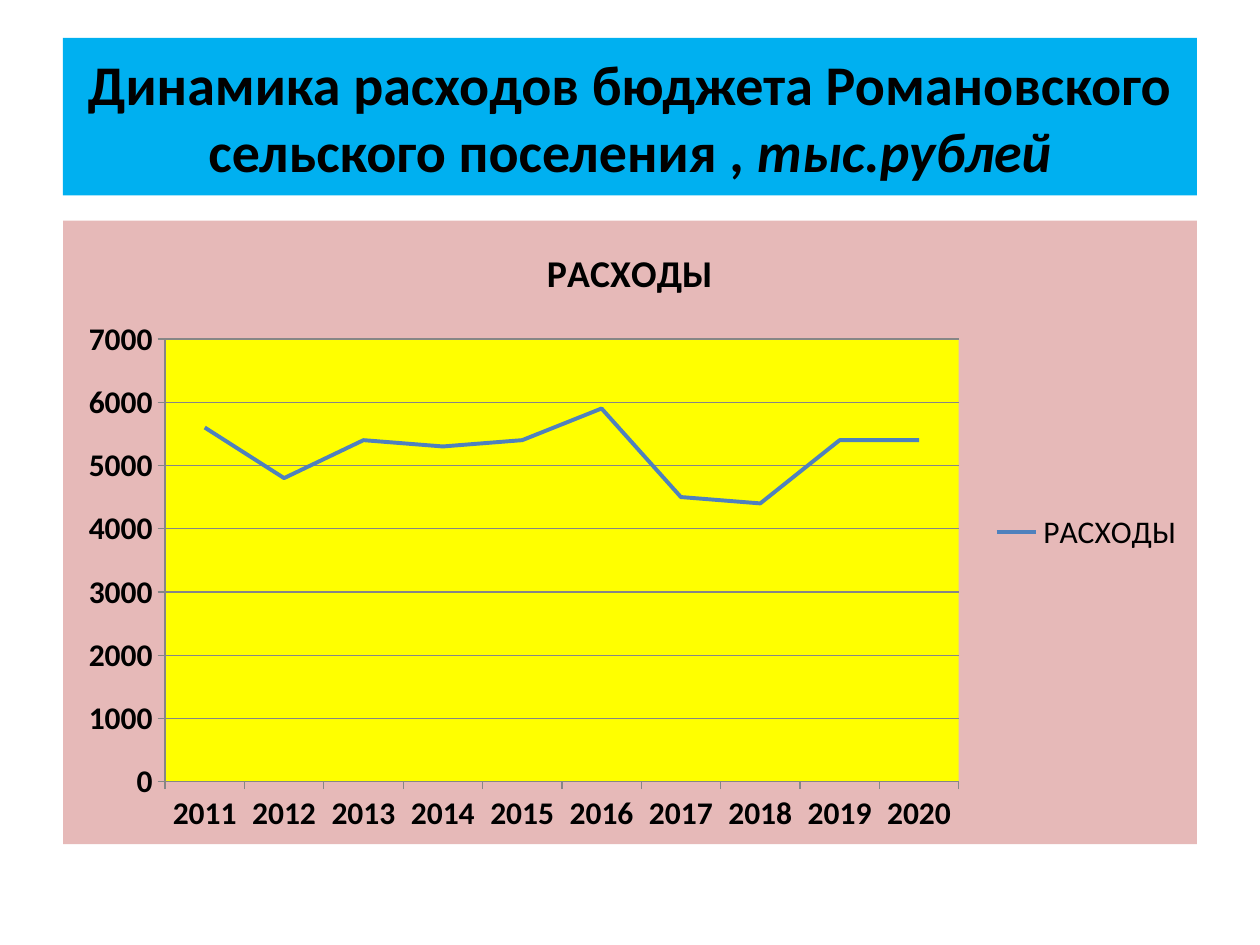
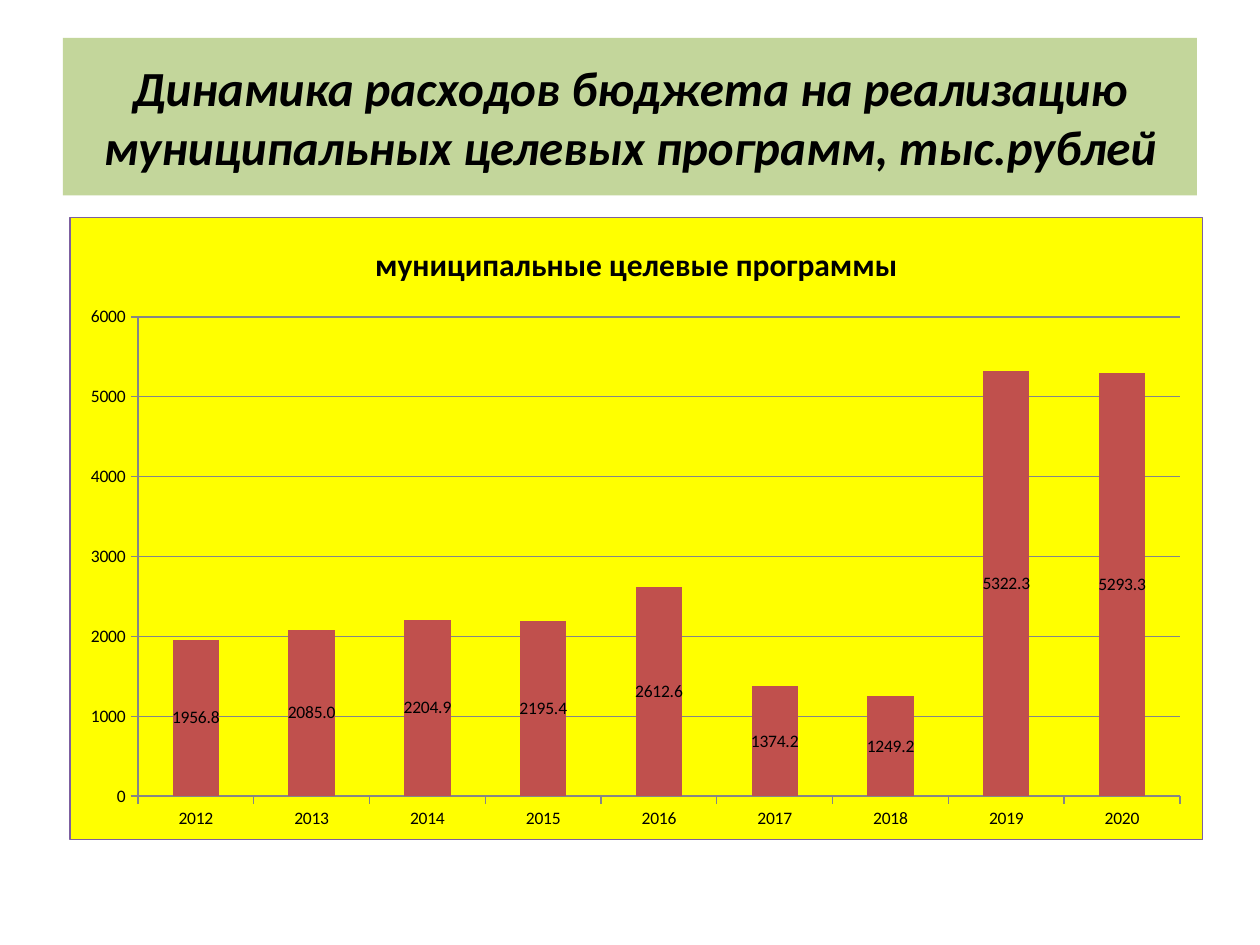
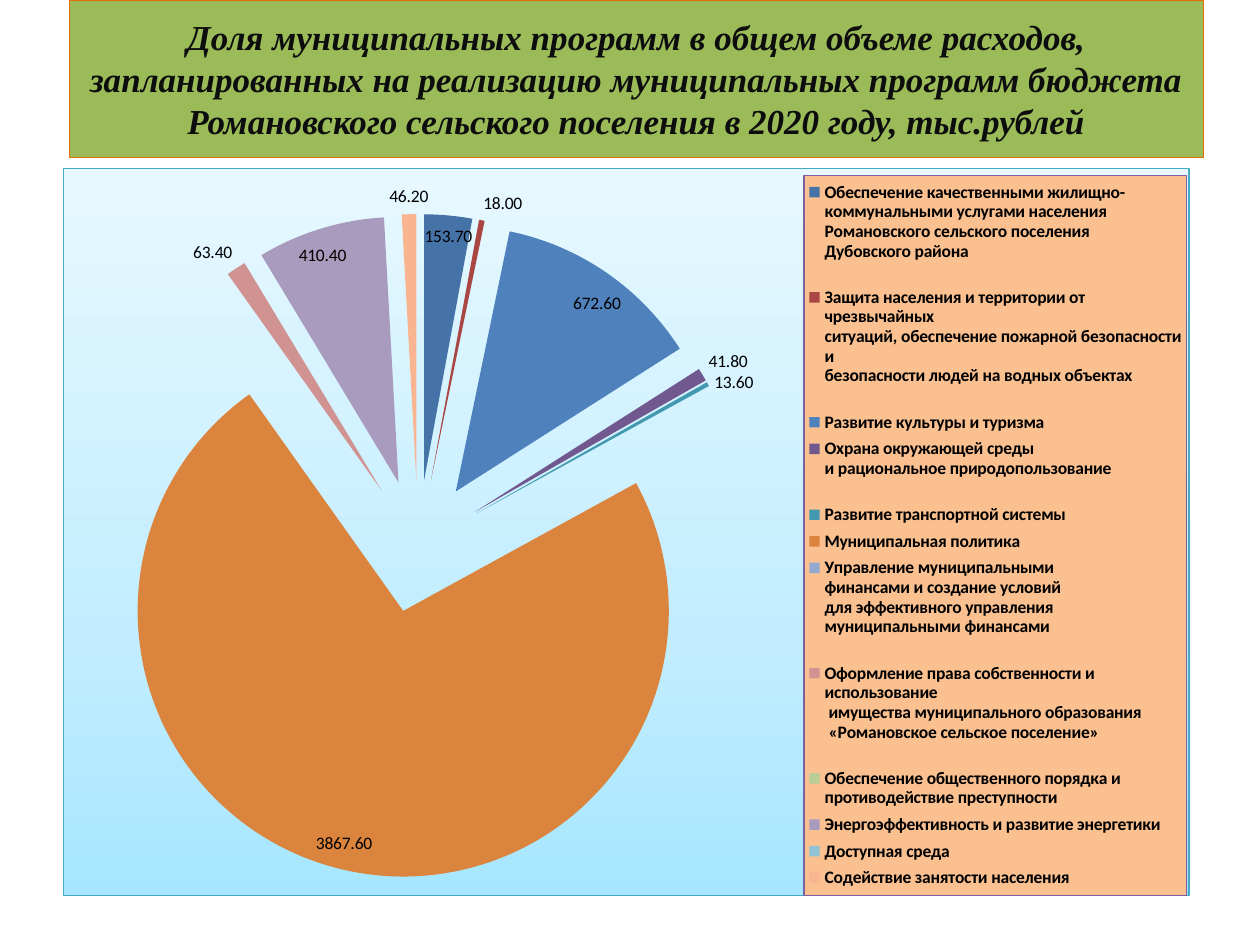
"""Build three slides on the budget spending of a rural settlement."""
from lxml import etree
from pptx import Presentation
from pptx.chart.data import CategoryChartData
from pptx.dml.color import RGBColor
from pptx.enum.chart import XL_CHART_TYPE, XL_LABEL_POSITION, XL_LEGEND_POSITION, XL_MARKER_STYLE
from pptx.enum.text import MSO_ANCHOR, PP_ALIGN
from pptx.oxml.ns import qn
from pptx.util import Inches, Pt

LINE, COLUMN, PIE = XL_CHART_TYPE.LINE_STACKED, XL_CHART_TYPE.COLUMN_STACKED, XL_CHART_TYPE.PIE
LABEL_CENTER, LABEL_BEST = XL_LABEL_POSITION.CENTER, XL_LABEL_POSITION.BEST_FIT
LEGEND_RIGHT = XL_LEGEND_POSITION.RIGHT
NO_MARKER = XL_MARKER_STYLE.NONE
MIDDLE, CENTER = MSO_ANCHOR.MIDDLE, PP_ALIGN.CENTER

BLACK = RGBColor(0x00, 0x00, 0x00)
INK = RGBColor(0x0D, 0x0D, 0x0D)
SKY = RGBColor(0x00, 0xB0, 0xF0)
PALE_GREEN = RGBColor(0xC3, 0xD6, 0x9B)
GREEN = RGBColor(0x9B, 0xBB, 0x59)
ORANGE = RGBColor(0xE4, 0x6C, 0x0A)
PEACH = RGBColor(0xFA, 0xC0, 0x90)
PINK = RGBColor(0xE6, 0xB9, 0xB8)
YELLOW = RGBColor(0xFF, 0xFF, 0x00)
PURPLE = RGBColor(0x7D, 0x60, 0xA0)
TEAL = RGBColor(0x46, 0xAA, 0xC5)
BLUE = RGBColor(0x4F, 0x81, 0xBD)
RED = RGBColor(0xC0, 0x50, 0x4D)
GREY = RGBColor(0x86, 0x86, 0x86)
ICE = ((0, RGBColor(0xA7, 0xE6, 0xFF)), (35, RGBColor(0xC1, 0xED, 0xFF)),
       (100, RGBColor(0xE7, 0xF8, 0xFF)))
SLICE_COLOURS = [RGBColor.from_string(code) for code in (
    "4572A7", "AA4643", "4F81BD", "71588F", "4198AF", "DB843D",
    "93A9CF", "D19392", "B9CD96", "A99BBD", "91C3D5", "F9B590")]

BODY_FONT, SERIF_FONT = "Calibri", "Times New Roman"
BAND_SIZE = (9, 1.25)

SPENDING_TITLE = [("Динамика расходов бюджета Романовского сельского поселения , ", False),
                  ("тыс.рублей", True)]
PROGRAMMES_TITLE = [("Динамика расходов бюджета на реализацию муниципальных целевых программ, "
                     "тыс.рублей", True)]
SHARES_TITLE = [("Доля муниципальных программ в общем объеме расходов, запланированных на "
                 "реализацию муниципальных программ бюджета Романовского сельского поселения "
                 "в 2020 году, тыс.рублей", True)]

SPENDING = [5600, 4800, 5400, 5300, 5400, 5900, 4500, 4400, 5400, 5400]
PROGRAMMES = [1956.8, 2085, 2204.9, 2195.4, 2612.6, 1374.2, 1249.2, 5322.3, 5293.3]
SHARES = [
    ("Обеспечение качественными жилищно-\nкоммунальными услугами населения \n"
     "Романовского сельского поселения\nДубовского района\n", 153.7),
    ("Защита населения и территории от чрезвычайных \n"
     "ситуаций, обеспечение пожарной безопасности и \n"
     "безопасности людей на водных объектах\n", 18),
    ("Развитие культуры и туризма", 672.6),
    ("Охрана окружающей среды \nи рациональное природопользование\n", 41.8),
    ("Развитие транспортной системы", 13.6),
    ("Муниципальная политика", 3867.6),
    ("Управление муниципальными \nфинансами и создание условий\n"
     "для эффективного управления \nмуниципальными финансами\n", 0),
    ("Оформление права собственности и использование\n"
     " имущества муниципального образования\n «Романовское сельское поселение»\n", 63.4),
    ("Обеспечение общественного порядка и противодействие преступности", 0),
    ("Энергоэффективность и развитие энергетики", 410.4),
    ("Доступная среда", 0),
    ("Содействие занятости населения", 46.2),
]


def add_band(page, left, top, spans, size, fill, font=BODY_FONT, colour=BLACK, border=None):
    box = page.shapes.add_textbox(*map(Inches, (left, top, *BAND_SIZE)))
    box.fill.solid()
    box.fill.fore_color.rgb = fill
    if border is not None:
        box.line.color.rgb = border
        box.line.width = Pt(0.75)
    frame = box.text_frame
    frame.word_wrap = True
    frame.vertical_anchor = MIDDLE
    para = frame.paragraphs[0]
    para.alignment = CENTER
    para.font.name, para.font.size, para.font.bold = font, Pt(size), True
    para.font.color.rgb = colour
    for text, italic in spans:
        span = para.add_run()
        span.text = text
        span.font.italic = italic


def add_child(parent, tag, **attributes):
    return etree.SubElement(parent, qn(tag), {key: str(value) for key, value in attributes.items()})


def paint(fill, border=None):
    """Return chart-part properties with a solid or gradient fill."""
    properties = etree.Element(qn("c:spPr"))
    if isinstance(fill, RGBColor):
        add_child(add_child(properties, "a:solidFill"), "a:srgbClr", val=fill)
    else:
        gradient = add_child(properties, "a:gradFill", rotWithShape=1)
        stops = add_child(gradient, "a:gsLst")
        for percent, colour in fill:
            add_child(add_child(stops, "a:gs", pos=percent * 1000), "a:srgbClr", val=colour)
        add_child(gradient, "a:lin", ang=270 * 60000, scaled=0)
    line = add_child(properties, "a:ln", w=Pt(0.75))
    if border is None:
        add_child(line, "a:noFill")
    else:
        add_child(add_child(line, "a:solidFill"), "a:srgbClr", val=border)
    return properties


def place(part, index, fractions, inner=False):
    """Place a chart part by fractions of the chart: left, top, width, height."""
    for old in part.findall(qn("c:layout")):
        part.remove(old)
    layout = etree.Element(qn("c:layout"))
    manual = add_child(layout, "c:manualLayout")
    if inner:
        add_child(manual, "c:layoutTarget", val="inner")
    add_child(manual, "c:xMode", val="edge")
    add_child(manual, "c:yMode", val="edge")
    for key, value in zip("xywh", fractions):
        add_child(manual, f"c:{key}", val=value)
    part.insert(index, layout)


def add_chart(page, kind, position, name, categories, values, size, fill, plot, border=None):
    chart_data = CategoryChartData()
    chart_data.categories = categories
    chart_data.add_series(name, values)
    chart = page.shapes.add_chart(kind, *map(Inches, position), chart_data).chart
    chart.font.name, chart.font.size = BODY_FONT, Pt(size)
    chart.font.color.rgb = BLACK
    chart.has_title = chart.has_legend = False
    chart.plots[0].vary_by_categories = kind == PIE
    root = chart.element.find(qn("c:chart"))
    root.addnext(paint(fill, border))
    place(root.find(qn("c:plotArea")), 0, plot, inner=True)
    return chart


def add_title(chart, text, size):
    chart.has_title = True
    para = chart.chart_title.text_frame.paragraphs[0]
    para.text = text
    para.font.name, para.font.size, para.font.bold = BODY_FONT, Pt(size), True
    para.font.color.rgb = BLACK


def add_legend(chart):
    chart.has_legend = True
    chart.legend.position = LEGEND_RIGHT
    chart.legend.include_in_layout = False
    return chart.legend


def style_axes(chart, top, bold=False):
    values = chart.value_axis
    values.minimum_scale, values.maximum_scale, values.major_unit = 0, top, 1000
    values.tick_labels.number_format = "General"
    values.tick_labels.number_format_is_linked = False
    values.has_major_gridlines = True
    for axis in (chart.category_axis, values):
        axis.tick_labels.font.bold = bold
    for line in (chart.category_axis.format.line, values.format.line,
                 values.major_gridlines.format.line):
        line.color.rgb = GREY
        line.width = Pt(0.75)


def show_values(chart, number_format, position):
    plot = chart.plots[0]
    plot.has_data_labels = True
    labels = plot.data_labels
    labels.show_value = True
    labels.number_format = number_format
    labels.number_format_is_linked = False
    labels.position = position


def build_spending(page):
    add_band(page, 0.5, 0.3, SPENDING_TITLE, 32, SKY)
    name = "РАСХОДЫ"
    years = [str(year) for year in range(2011, 2021)]
    chart = add_chart(page, LINE, (0.5, 1.75, 9, 4.95), name, years, SPENDING, 18, PINK,
                      (0.09, 0.19, 0.7, 0.71))
    chart.element.find(f".//{qn('c:plotArea')}").append(paint(YELLOW))
    add_title(chart, name, 21.6)
    add_legend(chart)
    style_axes(chart, 7000, bold=True)
    series = chart.plots[0].series[0]
    series.smooth = False
    series.marker.style = NO_MARKER
    series.format.line.color.rgb = BLUE
    series.format.line.width = Pt(2.25)


def build_programmes(page):
    add_band(page, 0.5, 0.3, PROGRAMMES_TITLE, 28, PALE_GREEN)
    name = "муниципальные целевые программы"
    years = [str(year) for year in range(2012, 2021)]
    chart = add_chart(page, COLUMN, (0.55, 1.72, 9, 4.95), name, years, PROGRAMMES, 10, YELLOW,
                      (0.06, 0.16, 0.92, 0.77), PURPLE)
    add_title(chart, name, 18)
    style_axes(chart, 6000)
    plot = chart.plots[0]
    plot.gap_width, plot.overlap = 150, 100
    fill = plot.series[0].format.fill
    fill.solid()
    fill.fore_color.rgb = RED
    show_values(chart, "0.0", LABEL_CENTER)


def build_shares(page):
    add_band(page, 0.55, 0, SHARES_TITLE, 20, GREEN, SERIF_FONT, INK, ORANGE)
    categories, values = zip(*SHARES)
    chart = add_chart(page, PIE, (0.5, 1.33, 8.95, 5.78), "Series 1", categories, values, 10, ICE,
                      (0.02, 0.06, 0.59, 0.92), TEAL)
    legend = add_legend(chart)
    legend.font.size, legend.font.bold = Pt(10), True
    legend_part = chart.element.find(f".//{qn('c:legend')}")
    place(legend_part, 1, (0.66, 0.01, 0.34, 0.99))
    legend_part.find(qn("c:overlay")).addnext(paint(PEACH, PURPLE))
    explosion = etree.Element(qn("c:explosion"), val="25")
    chart.element.find(f".//{qn('c:ser')}/{qn('c:tx')}").addnext(explosion)
    points = chart.plots[0].series[0].points
    for index, colour in enumerate(SLICE_COLOURS):
        fill = points[index].format.fill
        fill.solid()
        fill.fore_color.rgb = colour
    show_values(chart, "0.00;;", LABEL_BEST)


def main():
    deck = Presentation()
    deck.slide_width, deck.slide_height = Inches(10), Inches(7.5)
    for build in (build_spending, build_programmes, build_shares):
        build(deck.slides.add_slide(deck.slide_layouts[6]))
    deck.save("out.pptx")


if __name__ == "__main__":
    main()
